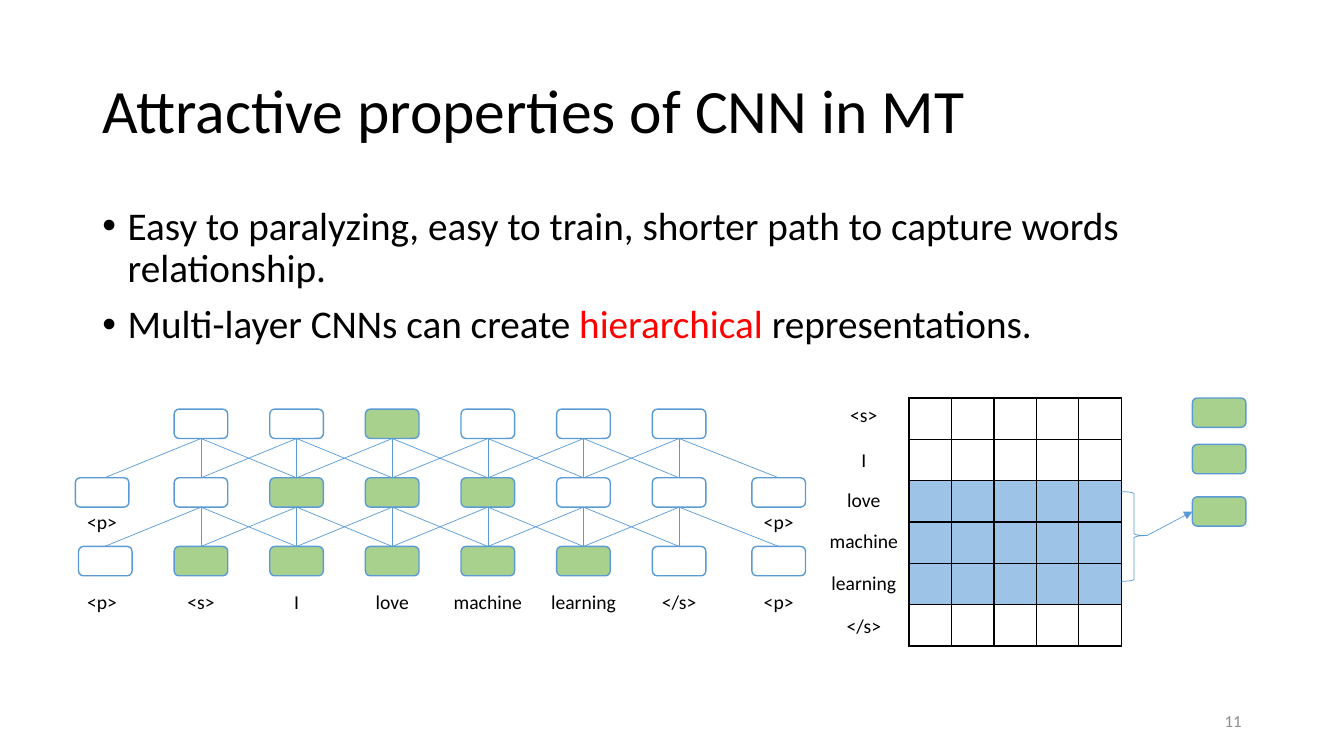
import dataclasses

import lxml.etree
import pptx
import pptx.dml.color
import pptx.enum.shapes
import pptx.enum.text
import pptx.oxml.ns
import pptx.util

Cm = pptx.util.Cm
Pt = pptx.util.Pt
qn = pptx.oxml.ns.qn
PRESET = pptx.enum.shapes.MSO_SHAPE
ALIGN = pptx.enum.text.PP_ALIGN
ANCHOR = pptx.enum.text.MSO_ANCHOR


@dataclasses.dataclass(frozen=True)
class Theme:
    font: str = "Calibri"
    ink: str = "000000"
    accent: str = "FF0000"
    muted: str = "8C8C8C"
    plain: str = "FFFFFF"
    active: str = "A9D18E"
    window: str = "9DC3E6"
    outline: str = "5B9BD5"
    title_size: int = 44
    body_size: int = 28
    label_size: int = 14
    number_size: int = 12
    node_line: float = 1
    link_line: float = 0.5


@dataclasses.dataclass(frozen=True)
class Box:
    left: float
    top: float
    width: float
    height: float

    def lengths(self):
        return Cm(self.left), Cm(self.top), Cm(self.width), Cm(self.height)


THEME = Theme()
NODE_WIDTH, NODE_HEIGHT = 1.35, 0.74
LABEL_HEIGHT = 0.86


def rgb(value):
    return pptx.dml.color.RGBColor.from_string(value)


def add_text(slide, box, paragraphs, size, color=THEME.ink, align=ALIGN.LEFT, anchor=ANCHOR.TOP):
    frame = slide.shapes.add_textbox(*box.lengths()).text_frame
    frame.word_wrap = True
    frame.vertical_anchor = anchor
    for index, pieces in enumerate(paragraphs):
        paragraph = frame.add_paragraph() if index else frame.paragraphs[0]
        paragraph.alignment = align
        for piece, piece_color in pieces:
            run = paragraph.add_run()
            run.text = piece
            run.font.name = THEME.font
            run.font.size = Pt(size)
            run.font.color.rgb = rgb(piece_color or color)
    return frame


def add_label(slide, center, top, word):
    width = 2.67
    box = Box(center - width / 2, top, width, LABEL_HEIGHT)
    add_text(slide, box, [[(word, None)]], THEME.label_size, align=ALIGN.CENTER)


def add_node(slide, left, top, fill):
    box = Box(left, top, NODE_WIDTH, NODE_HEIGHT)
    node = slide.shapes.add_shape(PRESET.ROUNDED_RECTANGLE, *box.lengths())
    node.shadow.inherit = False
    node.fill.solid()
    node.fill.fore_color.rgb = rgb(fill)
    node.line.color.rgb = rgb(THEME.outline)
    node.line.width = Pt(THEME.node_line)


def add_link(slide, start, end, arrow=False):
    link = slide.shapes.add_connector(
        pptx.enum.shapes.MSO_CONNECTOR.STRAIGHT, *(Cm(value) for value in start + end))
    link.line.color.rgb = rgb(THEME.outline)
    link.line.width = Pt(THEME.link_line)
    if arrow:
        lxml.etree.SubElement(link.line._get_or_add_ln(), qn("a:tailEnd"), type="triangle")
    lxml.etree.SubElement(link._element.spPr, qn("a:effectLst"))


def add_title(slide, box):
    heading = [("Attractive properties of CNN in MT", None)]
    frame = add_text(slide, box, [heading], THEME.title_size, anchor=ANCHOR.MIDDLE)
    frame.paragraphs[0].line_spacing = 0.9


def add_properties(slide, box):
    properties = [
        [("Easy to paralyzing, easy to train, shorter path to capture words relationship.", None)],
        [("Multi-layer CNNs can create ", None), ("hierarchical", THEME.accent),
         (" representations.", None)],
    ]
    frame = add_text(slide, box, properties, THEME.body_size)
    for paragraph in frame.paragraphs:
        paragraph.line_spacing = 0.9
        paragraph.space_before = Pt(10)
        indents = paragraph._p.get_or_add_pPr()
        indents.set("marL", str(Cm(0.64)))
        indents.set("indent", str(-Cm(0.64)))
        lxml.etree.SubElement(indents, qn("a:buFont"), typeface="Arial")
        lxml.etree.SubElement(indents, qn("a:buChar"), char="•")


def add_network(slide, box):
    words = ["<p>", "<s>", "I", "love", "machine", "learning", "</s>", "<p>"]
    last = len(words) - 1
    layer_pitch = 1.73
    word_lefts = [box.left + 2.49 + 2.41 * step for step in range(last - 1)]
    lefts = [box.left, *word_lefts, box.left + box.width - NODE_WIDTH]
    centers = [left + NODE_WIDTH / 2 for left in lefts]
    active_columns = [{3}, {2, 3, 4}, {1, 2, 3, 4, 5}]

    for layer, active in enumerate(active_columns):
        top = box.top + layer * layer_pitch
        columns = range(last + 1) if layer else range(1, last)
        for column in columns:
            shift = 0.08 if layer == 2 and column == 0 else 0
            fill = THEME.active if column in active else THEME.plain
            add_node(slide, lefts[column] + shift, top, fill)
        if layer < 2:
            for column in range(1, last):
                for below in (column - 1, column, column + 1):
                    add_link(slide, (centers[column], top + NODE_HEIGHT),
                             (centers[below] + (0.06 if below == 0 else 0), top + layer_pitch))

    for center, word in zip(centers, words):
        add_label(slide, center, box.top + 4.42, word)
    for column in (0, last):
        add_label(slide, centers[column], box.top + 2.41, words[column])


def add_cell_border(cell):
    properties = cell._tc.get_or_add_tcPr()
    for position, side in enumerate(("lnL", "lnR", "lnT", "lnB")):
        border = lxml.etree.Element(qn("a:" + side), w=str(Pt(1)))
        fill = lxml.etree.SubElement(border, qn("a:solidFill"))
        lxml.etree.SubElement(fill, qn("a:srgbClr"), val=THEME.ink)
        properties.insert(position, border)


def add_matrix(slide, box):
    word_tops = {"<s>": 0, "I": 1.14, "love": 2.13, "machine": 3.18,
                 "learning": 4.22, "</s>": 5.31}
    grid_left, grid_width, columns = box.left + 2.46, 5.35, 5
    grid = Box(grid_left, box.top, grid_width, box.height)
    table = slide.shapes.add_table(len(word_tops), columns, *grid.lengths()).table
    table.first_row = False
    table.horz_banding = False
    for column in table.columns:
        column.width = Cm(grid_width / columns)
    for index, row in enumerate(table.rows):
        row.height = Cm(box.height / len(word_tops))
        for cell in row.cells:
            cell.fill.solid()
            cell.fill.fore_color.rgb = rgb(THEME.window if 2 <= index <= 4 else THEME.plain)
            add_cell_border(cell)
    for word, offset in word_tops.items():
        add_label(slide, box.left + 1.32, box.top + offset, word)

    output_left = box.left + box.width - NODE_WIDTH
    output_tops = [box.top + offset for offset in (0, 1.17, 2.49)]
    for top in output_tops:
        add_node(slide, output_left, top, THEME.active)

    brace_box = Box(grid_left + grid_width, box.top + 2.36, 0.64, 2.26)
    brace = slide.shapes.add_shape(PRESET.RIGHT_BRACE, *brace_box.lengths())
    brace.shadow.inherit = False
    brace.adjustments[0] = 0.08
    brace.adjustments[1] = 0.49
    brace.fill.background()
    brace.line.color.rgb = rgb(THEME.outline)
    brace.line.width = Pt(THEME.link_line)
    tip = (brace_box.left + brace_box.width, brace_box.top + 0.49 * brace_box.height)
    add_link(slide, tip, (output_left, output_tops[-1] + NODE_HEIGHT / 2), arrow=True)


def add_slide_number(slide, box):
    add_text(slide, box, [[("11", None)]], THEME.number_size, THEME.muted,
             ALIGN.RIGHT, ANCHOR.MIDDLE)


def main():
    deck = pptx.Presentation()
    deck.slide_width, deck.slide_height = Cm(33.87), Cm(19.05)
    slide = deck.slides.add_slide(deck.slide_layouts[6])
    add_title(slide, Box(2.33, 1.01, 29.21, 3.68))
    add_properties(slide, Box(2.33, 5.07, 29.21, 12.09))
    add_network(slide, Box(1.9, 10.31, 18.4, 5.28))
    add_matrix(slide, Box(20.45, 10.03, 10.95, 6.25))
    add_slide_number(slide, Box(23.92, 17.66, 7.62, 1.01))
    deck.save("out.pptx")


if __name__ == "__main__":
    main()
